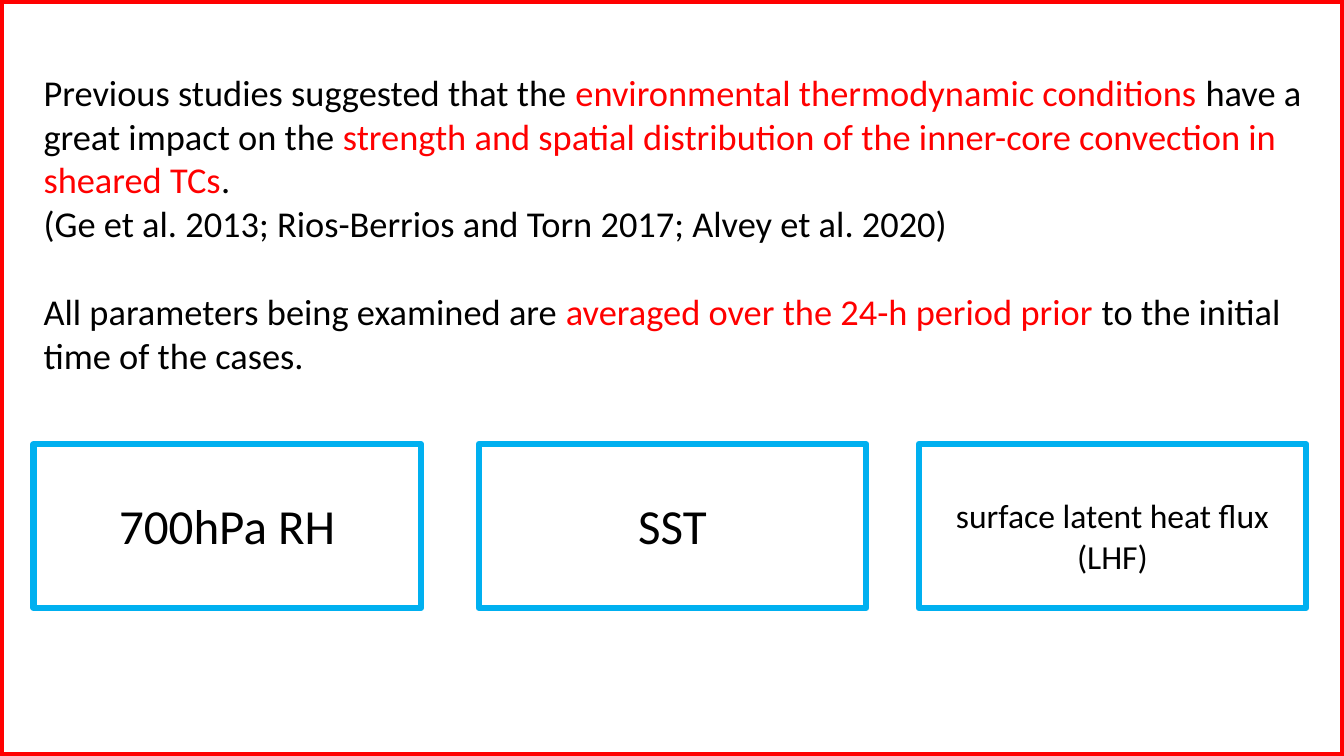
import pptx
import pptx.util
import pptx.dml.color
import pptx.enum.shapes
import pptx.enum.text

PX = 9525
SLIDE_WIDTH, SLIDE_HEIGHT = 1280, 720
BLACK = pptx.dml.color.RGBColor(0x00, 0x00, 0x00)
RED = pptx.dml.color.RGBColor(0xFF, 0x00, 0x00)
BLUE = pptx.dml.color.RGBColor(0x00, 0xB0, 0xF0)

STUDIES = [
    ("Previous studies suggested that the ", BLACK),
    ("environmental thermodynamic conditions ", RED),
    ("have a great impact on the ", BLACK),
    ("strength and spatial distribution of the inner-core convection in sheared TCs", RED),
    (".", BLACK),
]
CITATIONS = [("(Ge et al. 2013; Rios-Berrios and Torn 2017; Alvey et al. 2020)", BLACK)]
AVERAGING = [
    ("All parameters being examined are ", BLACK),
    ("averaged over the 24-h period prior", RED),
    (" to the initial time of the cases.", BLACK),
]
PARAMETERS = [
    (32, ["700hPa RH"], 35, 66),
    (456, ["SST"], 35, 66),
    (875, ["surface latent heat flux", "(LHF)"], 24, 87),
]


def emu(*lengths):
    return [pptx.util.Emu(length * PX) for length in lengths]


def add_outline(slide, box, color, weight):
    outline = slide.shapes.add_shape(pptx.enum.shapes.MSO_SHAPE.RECTANGLE, *emu(*box))
    outline.shadow.inherit = False
    outline.fill.background()
    outline.line.color.rgb = color
    outline.line.width = pptx.util.Pt(weight)


def add_text(slide, box, paragraphs, size, align=pptx.enum.text.PP_ALIGN.LEFT, gaps=None):
    frame = slide.shapes.add_textbox(*emu(*box)).text_frame
    frame.word_wrap = True
    for index, pieces in enumerate(paragraphs):
        paragraph = frame.add_paragraph() if index else frame.paragraphs[0]
        paragraph.alignment = align
        if gaps and index in gaps:
            paragraph.space_before = pptx.util.Pt(gaps[index])
        for words, color in pieces:
            run = paragraph.add_run()
            run.text = words
            run.font.name = "Calibri"
            run.font.size = pptx.util.Pt(size)
            run.font.color.rgb = color


def add_background(slide, box):
    add_text(slide, box, [STUDIES, CITATIONS, AVERAGING], 26, gaps={2: 32})


def add_parameter(slide, box, lines, size, label_height):
    left, top, width, height = box
    add_outline(slide, box, BLUE, 4.5)
    add_text(slide, (left - 18, top + 44, width + 36, label_height),
             [[(line, BLACK)] for line in lines], size,
             align=pptx.enum.text.PP_ALIGN.CENTER)


def main():
    deck = pptx.Presentation()
    deck.slide_width, deck.slide_height = emu(SLIDE_WIDTH, SLIDE_HEIGHT)
    slide = deck.slides.add_slide(deck.slide_layouts[6])
    add_outline(slide, (0, 0, SLIDE_WIDTH, SLIDE_HEIGHT), RED, 6)
    add_background(slide, (32, 62, 1237, 303))
    for left, lines, size, label_height in PARAMETERS:
        add_parameter(slide, (left, 423, 369, 156), lines, size, label_height)
    deck.save("out.pptx")


if __name__ == "__main__":
    main()
